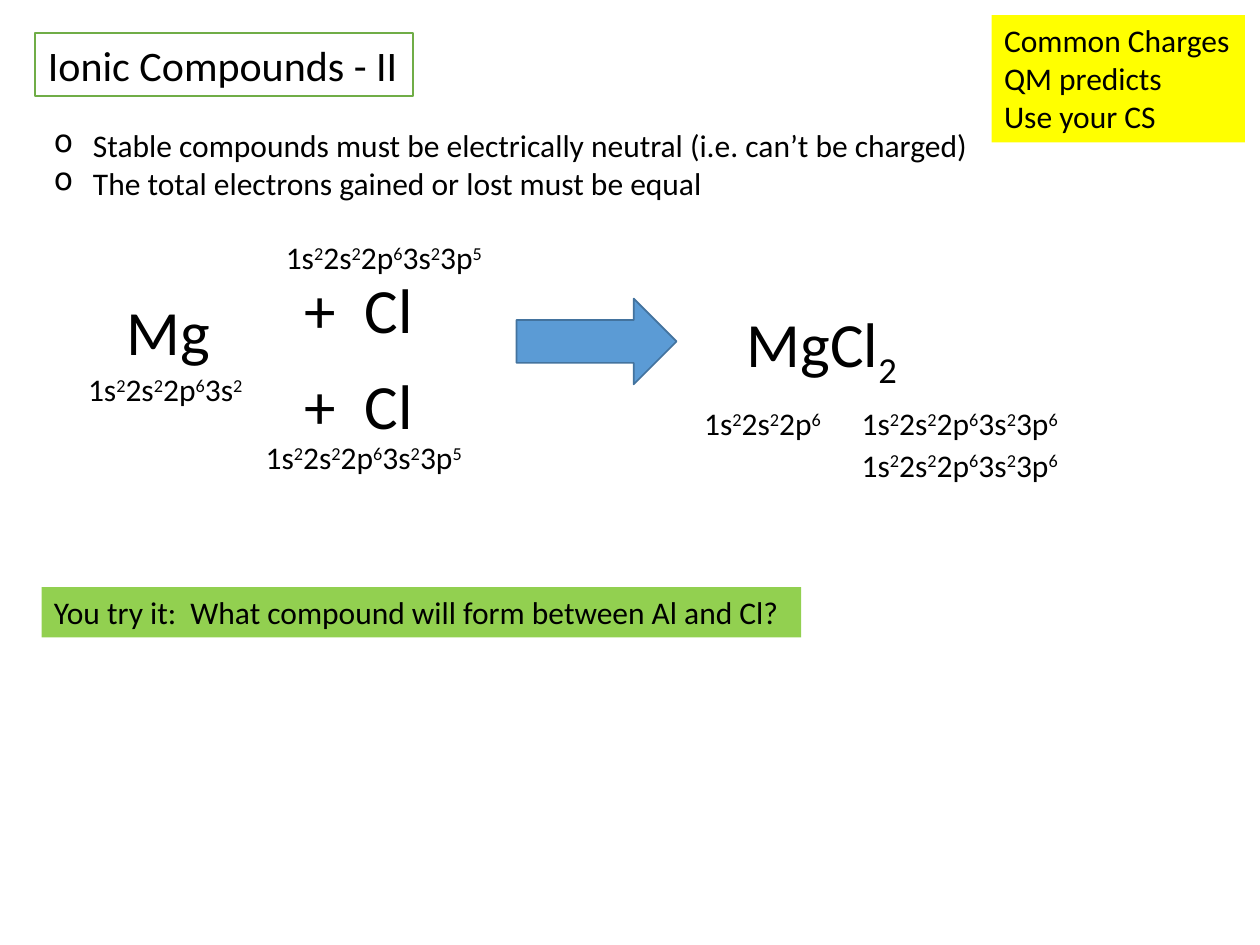
from pptx import Presentation
from pptx.dml.color import RGBColor
from pptx.enum import shapes, text
from pptx.util import Inches, Pt

BLACK = RGBColor(0x00, 0x00, 0x00)
WHITE = RGBColor(0xFF, 0xFF, 0xFF)
GREEN_LINE = RGBColor(0x70, 0xAD, 0x47)
GREEN = RGBColor(0x92, 0xD0, 0x50)
YELLOW = RGBColor(0xFF, 0xFF, 0x00)
BLUE = RGBColor(0x5B, 0x9B, 0xD5)
BLUE_LINE = RGBColor(0x43, 0x73, 0x9E)

prs = Presentation()
prs.slide_width, prs.slide_height = Inches(10), Inches(7.5)
s = prs.slides.add_slide(prs.slide_layouts[5])


def write(lines, at, size=18, fill=None, bullet=None, shift=30, wrap=False, sp=None):
    """Write lines into a box; text between ^ marks is raised or lowered by shift percent."""
    box = [Inches(v) for v in at]
    if sp is None:
        sp = s.shapes.add_textbox(*box)
    else:
        sp.left, sp.top, sp.width, sp.height = box
    if fill is not None:
        sp.fill.solid()
        sp.fill.fore_color.rgb = fill
    tf = sp.text_frame
    tf.word_wrap = wrap
    # A placeholder that grows would return to its layout height
    tf.auto_size = (text.MSO_AUTO_SIZE.NONE if sp.is_placeholder
                    else text.MSO_AUTO_SIZE.SHAPE_TO_FIT_TEXT)
    tf.vertical_anchor = text.MSO_ANCHOR.TOP
    for i, line in enumerate(lines):
        p = tf.add_paragraph() if i else tf.paragraphs[0]
        p.alignment = text.PP_ALIGN.LEFT
        if bullet:
            pPr = p._p.get_or_add_pPr()
            pPr.set("marL", str(Inches(0.31)))
            pPr.set("indent", str(-Inches(0.31)))
            bu = pPr.makeelement(
                "{http://schemas.openxmlformats.org/drawingml/2006/main}buChar", {"char": bullet})
            pPr.append(bu)
        for j, part in enumerate(line.split("^")):
            if not part:
                continue
            r = p.add_run()
            r.text = part
            r.font.size = Pt(size)
            r.font.name = "Calibri"
            r.font.color.rgb = BLACK
            if j % 2:
                r.font._element.set("baseline", str(shift * 1000))
    return sp


# Title
title = write(["Ionic Compounds - II"], (0.28, 0.26, 3, 0.5), size=24,
              fill=WHITE, sp=s.shapes.title)
title.line.color.rgb = GREEN_LINE
title.line.width = Pt(1)

# Rules for stable compounds
write(["Stable compounds must be electrically neutral (i.e. can’t be charged)",
       "The total electrons gained or lost must be equal"],
      (0.33, 0.95, 7.54, 0.71), bullet="o")

# Atoms and the compound they form
write(["Mg"], (0.91, 2.27, 0.87, 0.71), size=36)
for top in (2.1, 2.86):
    write(["+  Cl"], (2.32, top, 1.07, 0.71), size=36)
write(["MgCl^2^"], (5.83, 2.37, 1.43, 0.71), size=36, shift=-25)

# Reaction arrow
arrow = s.shapes.add_shape(shapes.MSO_SHAPE.RIGHT_ARROW, Inches(4.1), Inches(2.37),
                           Inches(1.27), Inches(0.68))
arrow.shadow.inherit = False
arrow.fill.solid()
arrow.fill.fore_color.rgb = BLUE
arrow.line.color.rgb = BLUE_LINE
arrow.line.width = Pt(1)

# Electron configurations, before and after the reaction
neon = "1s^2^2s^2^2p^6^"
magnesium = neon + "3s^2^"
chlorine = magnesium + "3p^5^"
chloride = magnesium + "3p^6^"
for config, left, top, width in [
    (magnesium, 0.6, 2.89, 1.49),
    (chlorine, 2.17, 1.84, 1.83),
    (chlorine, 2.01, 3.43, 1.83),
    (neon, 5.49, 3.16, 1.17),
    (chloride, 6.74, 3.16, 1.83),
    (chloride, 6.74, 3.49, 1.83),
]:
    write([config], (left, top, width, 0.4))

# Exercise and reminder
write(["You try it:  What compound will form between Al and Cl?"],
      (0.33, 4.66, 6.03, 0.4), fill=GREEN, wrap=True)
write(["Common Charges", "QM predicts", "Use your CS"],
      (7.87, 0.12, 2.01, 1.01), fill=YELLOW)

prs.save("out.pptx")
